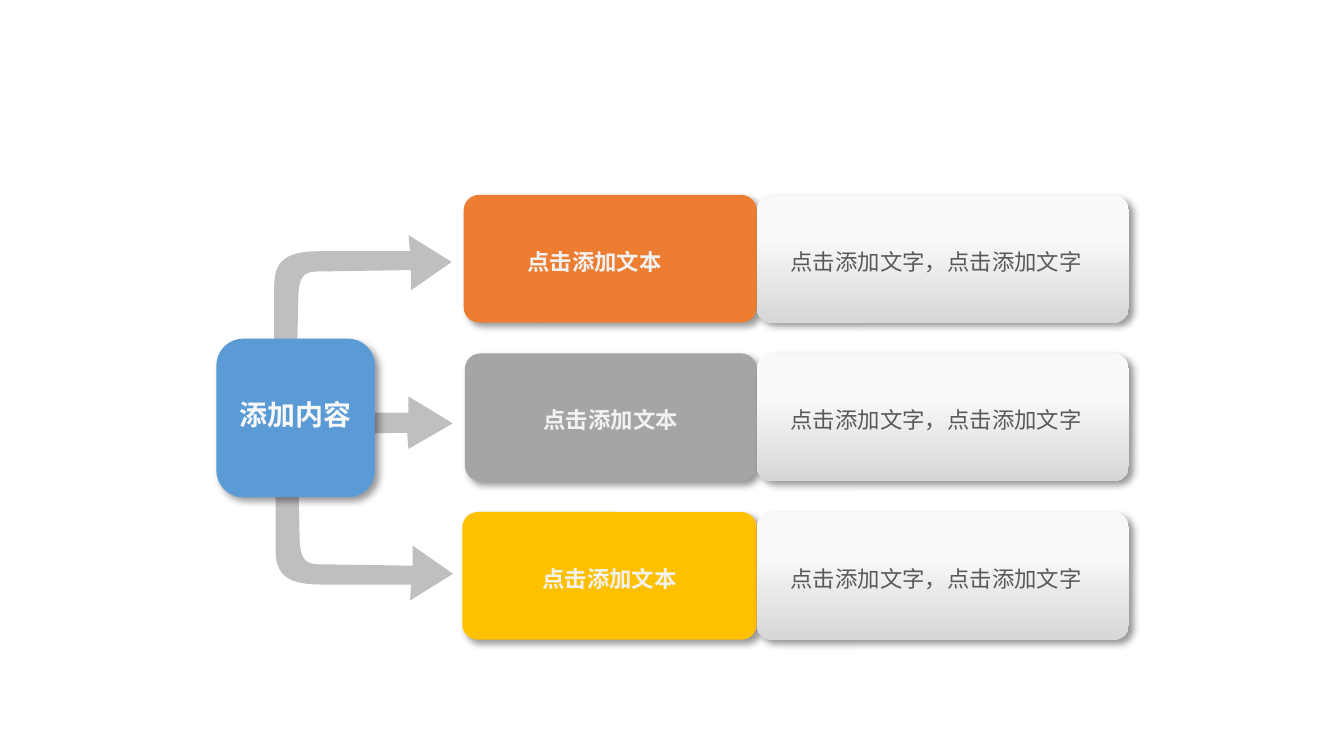
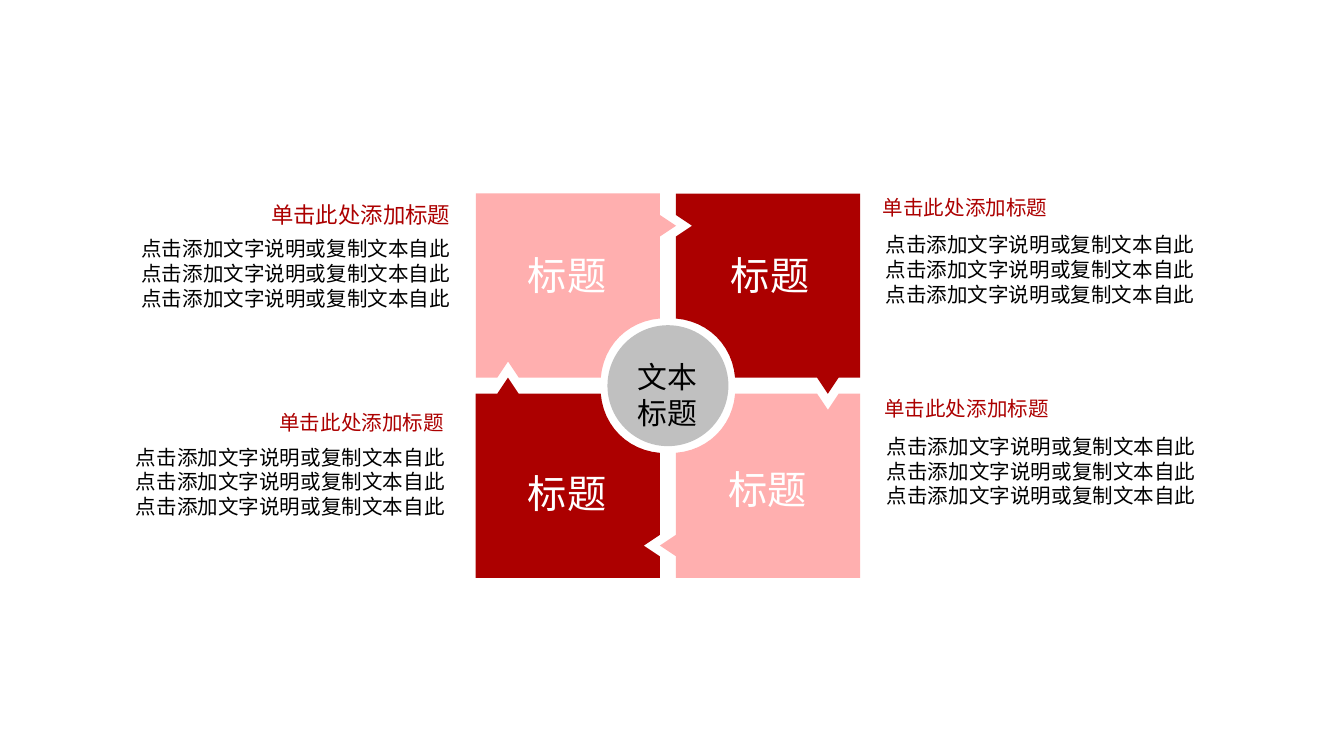
from lxml.etree import SubElement
from pptx import Presentation
from pptx.dml.color import RGBColor
from pptx.enum.shapes import MSO_SHAPE
from pptx.enum.text import MSO_ANCHOR, PP_ALIGN
from pptx.oxml.ns import qn
from pptx.util import Inches, Pt

SANS, BODY = "Noto Sans CJK SC", "Calibri"
LEFT, MID, RIGHT = PP_ALIGN.LEFT, PP_ALIGN.CENTER, PP_ALIGN.RIGHT
ARROW, RED, PINK = "BFBFBF", "AC0000", "FFAFAF"

# Slide 1: label, label alignment, left inset, box left, colour, detail
ROWS = [
    ("点击添加文本", LEFT, 0.44, 3.45, "ED7D31", "点击添加文字，点击添加文字"),
    ("点击添加文本", MID, 0.07, 3.46, "A5A5A5", "点击添加文字，点击添加文字"),
    ("点击添加文本", MID, 0.07, 3.44, "FFC000", "点击添加文字，点击添加文字"),
]
ROW_TOP, ROW_STEP, ROW_H = 1.45, 1.18, 0.95
SPLIT, DETAIL_W = 5.63, 2.77
AXIS = 3.11

# Outlines: a pair is a line point, a triple of pairs is a Bezier curve
STRAIGHT = [(1.81, 3.24), (3.03, 3.22), (3.04, 3.34), (3.37, 3.15),
            (3.04, 2.95), (3.04, 3.07), (1.81, 3.07)]
BENT = [(2.2, 3.11), (2.22, 2.19), ((2.23, 2.02), (2.29, 2.02), (2.41, 2.02)),
        (3.06, 2.01), (3.06, 2.16), (3.36, 1.95), (3.04, 1.75), (3.05, 1.87),
        ((3.05, 1.87), (2.61, 1.87), (2.37, 1.87)),
        ((2.12, 1.87), (2.04, 1.95), (2.04, 2.13)), (2.04, 3.11)]

# Slide 2: the upper left piece, measured from the hub
HUB = (4.97, 2.87)
PIECE = [(-1.43, -1.43), (-0.06, -1.43), (-0.06, -1.27), (0.06, -1.19),
         (-0.06, -1.11), (-0.06, -0.5),
         ((-0.3, -0.48), (-0.48, -0.3), (-0.5, -0.06)),
         (-1.11, -0.06), (-1.19, -0.18), (-1.27, -0.06), (-1.43, -0.06)]
# Clockwise from the upper left: colour, place of the label
PIECES = [(PINK, (3.53, 1.82)), (RED, (5.04, 1.82)),
          (PINK, (5.02, 3.41)), (RED, (3.53, 3.44))]
PIECE_LABEL = "标题"
HUB_LINES = ["文本", "标题"]
HEAD = "单击此处添加标题"
LINES = ["点击添加文字说明或复制文本自此"] * 3
# Heading box, heading size, body box, body alignment
NOTES = [
    ((6.47, 1.4, 2.42, 0.29), 11, (6.49, 1.68, 2.92, 0.66), LEFT),
    ((6.48, 2.9, 2.41, 0.29), 11, (6.5, 3.18, 2.91, 0.66), LEFT),
    ((1.92, 1.45, 1.56, 0.3), 12, (0.48, 1.71, 2.97, 0.66), RIGHT),
    ((1.98, 3, 1.51, 0.29), 11, (0.55, 3.26, 2.86, 0.66), RIGHT),
]


def rgb(code):
    return RGBColor.from_string(code)


def write(shape, lines, size, color, font=SANS, bold=False, align=LEFT, space=None):
    frame = shape.text_frame
    frame.word_wrap = True
    for i, line in enumerate(lines):
        para = frame.paragraphs[0] if i == 0 else frame.add_paragraph()
        para.alignment = align
        para.line_spacing = space
        run = para.add_run()
        run.text = line
        run.font.size, run.font.bold, run.font.name = Pt(size), bold, font
        run.font.color.rgb = rgb(color)
        SubElement(run.font._element, qn("a:ea"), typeface=font)


def label(slide, box, *args, **style):
    write(slide.shapes.add_textbox(*map(Inches, box)), *args, **style)


def paint(shape, color):
    shape.shadow.inherit = False
    shape.line.fill.background()
    shape.fill.solid()
    shape.fill.fore_color.rgb = rgb(color)


def shade(shape):
    """Add a soft shadow towards the lower right."""
    effects = shape._element.spPr.find(qn("a:effectLst"))
    outer = SubElement(effects, qn("a:outerShdw"), blurRad=str(Pt(4)),
                       dist=str(Pt(3)), dir="2700000", algn="tl", rotWithShape="0")
    tone = SubElement(outer, qn("a:srgbClr"), val="000000")
    SubElement(tone, qn("a:alpha"), val="40000")


def card(slide, box, color, insets, round_by):
    shape = slide.shapes.add_shape(MSO_SHAPE.ROUNDED_RECTANGLE, *map(Inches, box))
    shape.adjustments[0] = round_by
    paint(shape, color)
    shade(shape)
    frame = shape.text_frame
    frame.vertical_anchor = MSO_ANCHOR.MIDDLE
    (frame.margin_left, frame.margin_top,
     frame.margin_right, frame.margin_bottom) = map(Inches, insets)
    return shape


def fade(shape):
    shape.fill.gradient()
    shape.fill.gradient_angle = 270
    stops = shape.fill.gradient_stops
    for stop, place, color in zip(stops, (0.33, 1), ("F9F9F9", "D7D7D7")):
        stop.position = place
        stop.color.rgb = rgb(color)


def trace(outline, steps=12):
    """Turn an outline with curves into plain points."""
    points = []
    for part in outline:
        if isinstance(part[0], tuple):
            a, (b, c, d) = points[-1], part
            for t in (i / steps for i in range(1, steps + 1)):
                u = 1 - t
                points.append(tuple(
                    u**3 * a[k] + 3 * u * u * t * b[k] + 3 * u * t * t * c[k] + t**3 * d[k]
                    for k in (0, 1)))
        else:
            points.append(part)
    return points


def draw(slide, points, color):
    spots = [(Inches(x), Inches(y)) for x, y in points]
    pen = slide.shapes.build_freeform(*spots[0])
    pen.add_line_segments(spots[1:], close=True)
    paint(pen.convert_to_shape(), color)


def branches(slide):
    bent = trace(BENT)
    draw(slide, [(x + 0.01, 2 * AXIS - y) for x, y in bent], ARROW)
    draw(slide, STRAIGHT, ARROW)
    draw(slide, bent, ARROW)
    for i, (name, align, inset, left, color, _) in enumerate(ROWS):
        box = (left, ROW_TOP + i * ROW_STEP, SPLIT - left, ROW_H)
        shape = card(slide, box, color, (inset, 0.04, 0.07, 0.04), 0.12)
        write(shape, [name], 12, "F2F2F2", bold=True, align=align, space=1.2)
    root = card(slide, (1.61, 2.52, 1.18, 1.18), "5B9BD5", (0.1, 0.04, 0.1, 0.15), 0.17)
    write(root, ["添加内容"], 15, "F9F9F9", bold=True, align=MID, space=1.2)
    for i, row in enumerate(ROWS):
        box = (SPLIT, ROW_TOP + i * ROW_STEP, DETAIL_W, ROW_H)
        shape = card(slide, box, "F9F9F9", (0.22, 0.04, 0.07, 0.04), 0.12)
        fade(shape)
        write(shape, [row[-1]], 12, "595959", space=1.2)


def wheel(slide):
    points = trace(PIECE)
    for color, spot in PIECES:
        draw(slide, [(HUB[0] + x, HUB[1] + y) for x, y in points], color)
        label(slide, (*spot, 1.38, 0.45), [PIECE_LABEL], 21, "FFFFFF", align=MID)
        points = [(-y, x) for x, y in points]
    for head, size, body, align in NOTES:
        label(slide, head, [HEAD], size, RED)
        label(slide, body, LINES, 11, "000000", font=BODY, align=align)
    disc = slide.shapes.add_shape(MSO_SHAPE.OVAL, *map(Inches, (4.52, 2.42, 0.9, 0.9)))
    paint(disc, "C0C0C0")
    label(slide, (4.44, 2.62, 1.05, 0.64), HUB_LINES, 16, "000000", align=MID)


def main():
    deck = Presentation()
    deck.slide_width = Inches(10)
    deck.slide_height = Inches(10) * 9 // 16
    for build in (branches, wheel):
        build(deck.slides.add_slide(deck.slide_layouts[6]))
    deck.save("out.pptx")


if __name__ == "__main__":
    main()
